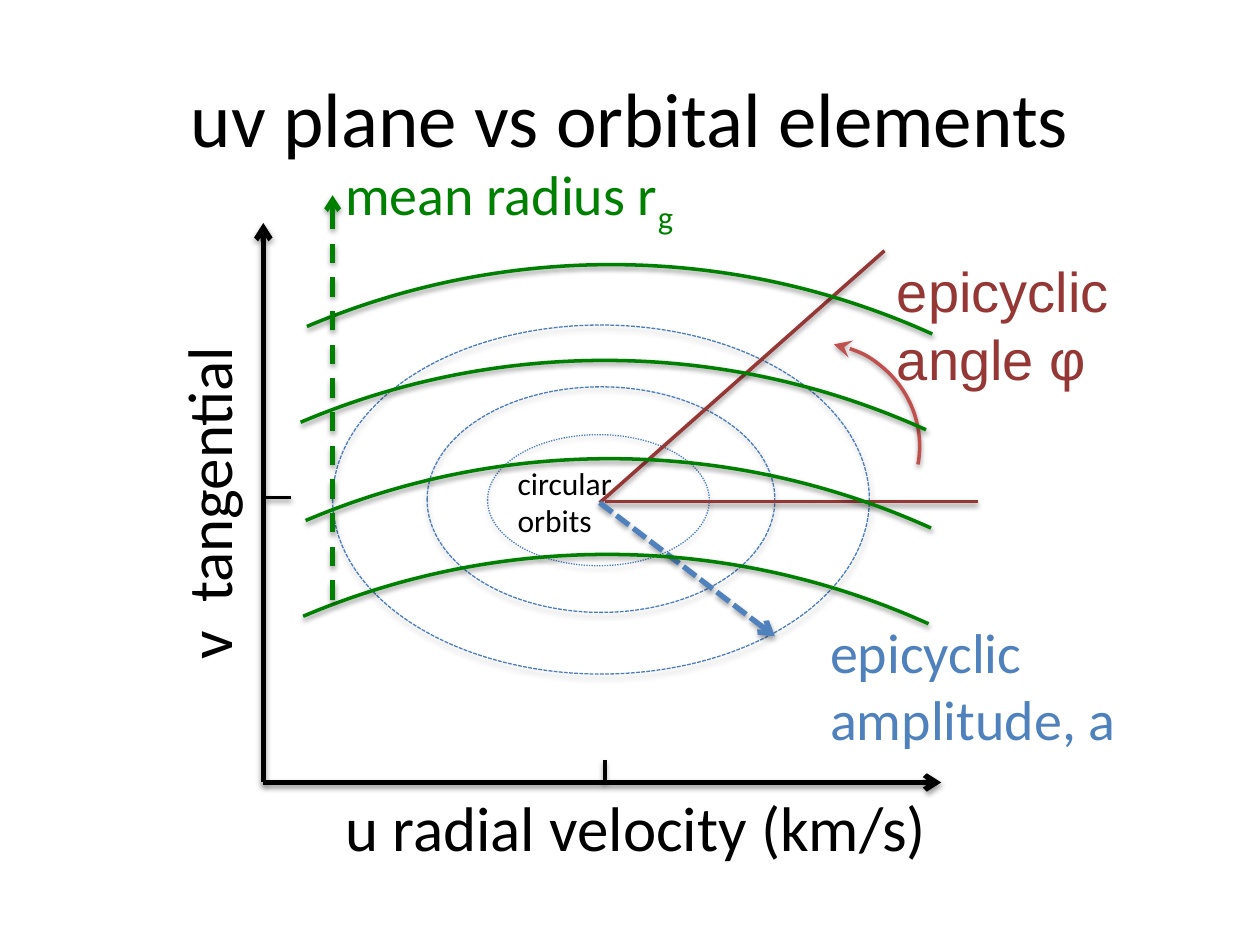
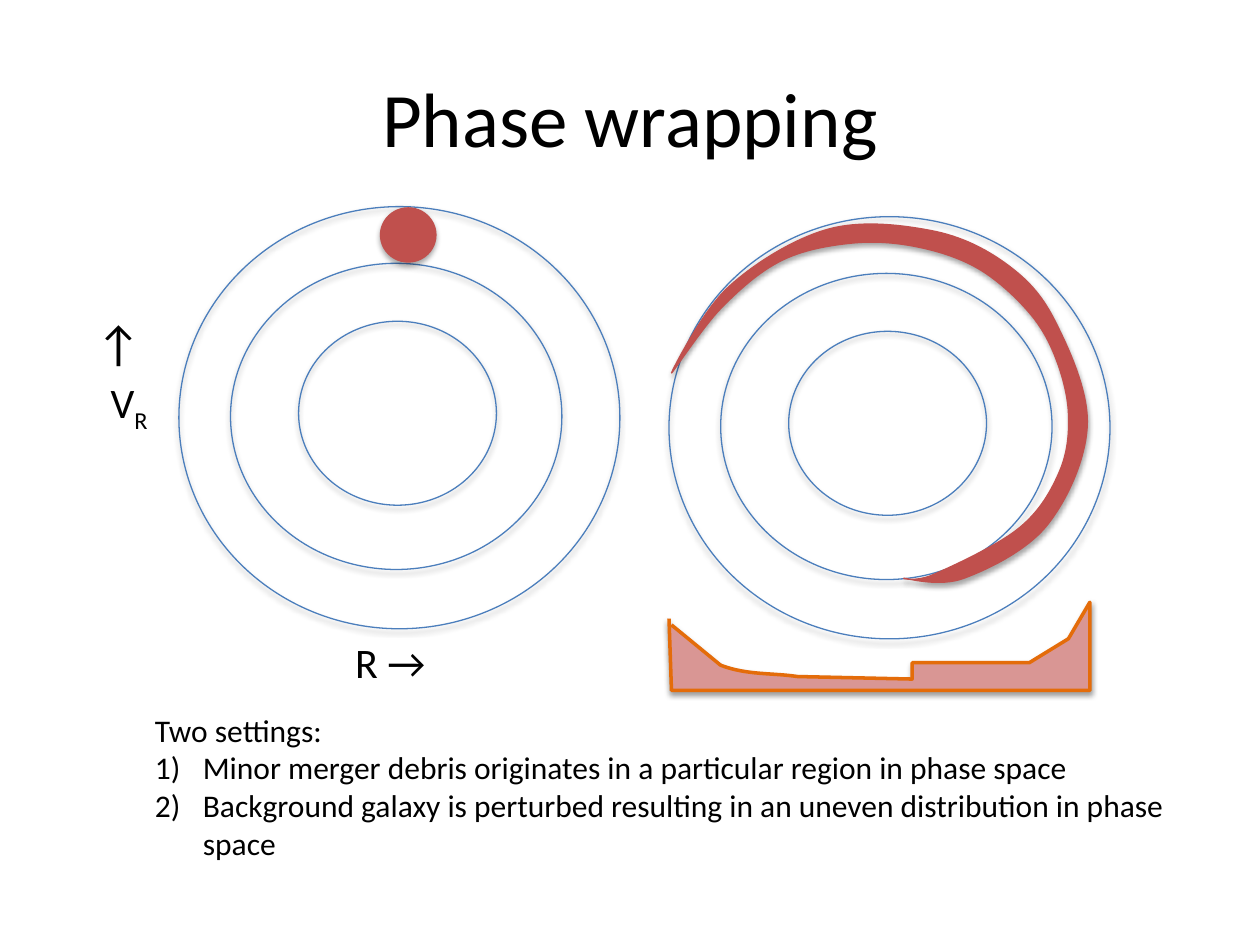
from pptx import Presentation
from pptx.dml.color import RGBColor
from pptx.enum.dml import MSO_LINE
from pptx.enum.shapes import MSO_CONNECTOR, MSO_SHAPE as SHAPE
from pptx.enum.text import MSO_ANCHOR, MSO_AUTO_SIZE, PP_ALIGN
from pptx.oxml import parse_xml
from pptx.oxml.ns import nsdecls, qn
from pptx.oxml.xmlchemy import OxmlElement
from pptx.util import Inches, Pt

# Shared look
COLORS = {
    "black": "000000", "ring": "4B7EBC", "amplitude": "4F81BD",
    "angle": "953735", "debris": "C0504D", "radius": "008000",
    "histogram": "D99694", "outline": "E46C0A",
}
FONT = "Calibri"
TITLE_BOX = (0.5, 0.3, 9, 1.25)
RING_SHADOW = (35, 1.8)  # opacity in percent, distance in points
LINE_SHADOW = (38, 1.6)


def rgb(name):
    return RGBColor.from_string(COLORS[name])


def place(sp, box):
    for name, value in zip(("left", "top", "width", "height"), box):
        setattr(sp, name, Inches(value))


def add_shadow(sp, shadow):
    opacity, dist = shadow
    sp._element.spPr.append(parse_xml(
        f'<a:effectLst {nsdecls("a")}><a:outerShdw blurRad="{Pt(3.1)}" '
        f'dist="{Pt(dist)}" dir="5400000" rotWithShape="0">'
        f'<a:srgbClr val="000000"><a:alpha val="{opacity * 1000}"/></a:srgbClr>'
        '</a:outerShdw></a:effectLst>'))


def stroke(sp, color, width, dash=None, head=None, tail=None):
    line = sp.line
    line.color.rgb = rgb(color)
    line.width = Pt(width)
    if dash is not None:
        line.dash_style = dash
    for tag, kind in (("a:headEnd", head), ("a:tailEnd", tail)):
        if kind:
            end = OxmlElement(tag)
            end.set("type", kind)
            if kind == "stealth":
                end.set("w", "lg")
                end.set("len", "lg")
            line._get_or_add_ln().append(end)


def paint(sp, fill):
    if fill:
        sp.fill.solid()
        sp.fill.fore_color.rgb = rgb(fill)
    else:
        sp.fill.background()


def add_outline(shapes, kind, box, color, width, fill=None, shadow=LINE_SHADOW,
                rotation=0, adjust=(), **ends):
    sp = shapes.add_shape(kind, *map(Inches, box))
    sp.rotation = rotation
    for i, value in enumerate(adjust):
        sp.adjustments[i] = value
    paint(sp, fill)
    stroke(sp, color, width, **ends)
    add_shadow(sp, shadow)


def add_line(shapes, start, end, color, width, **ends):
    sp = shapes.add_connector(MSO_CONNECTOR.STRAIGHT, *map(Inches, (*start, *end)))
    stroke(sp, color, width, **ends)
    add_shadow(sp, LINE_SHADOW)


def add_freeform(shapes, origin, points, curves, fill, color, width, shadow, close):
    """Outline through the points; curves maps a segment to its two control points."""
    pts = [(Inches(x), Inches(y)) for x, y in points]
    builder = shapes.build_freeform(*pts[0])
    builder.add_line_segments(pts[1:], close=close)
    sp = builder.convert_to_shape(*map(Inches, origin))
    left, top = (min(axis) for axis in zip(*pts))
    for i, segment in enumerate(list(sp._element.iter(qn("a:lnTo")))):
        if i in curves:
            curve = OxmlElement("a:cubicBezTo")
            for x, y in curves[i]:
                pt = OxmlElement("a:pt")
                pt.set("x", str(Inches(x) - left))
                pt.set("y", str(Inches(y) - top))
                curve.append(pt)
            curve.append(segment[0])
            segment.getparent().replace(segment, curve)
    paint(sp, fill)
    stroke(sp, color, width)
    add_shadow(sp, shadow)


def smooth_controls(knots):
    """Control points of a closed Catmull-Rom curve through the knots."""
    n = len(knots)
    curves = {}
    for i in range(n):
        before, a, b, after = (knots[(i + k) % n] for k in (-1, 0, 1, 2))
        curves[i] = (tuple(q + (s - p) / 6 for p, q, s in zip(before, a, b)),
                     tuple(q - (s - p) / 6 for p, q, s in zip(a, b, after)))
    return curves


def format_run(r, size, color="black", font=FONT):
    for name, value in {"name": font, "size": Pt(size)}.items():
        setattr(r.font, name, value)
    r.font.color.rgb = rgb(color)


def add_label(shapes, box, lines, size, color="black", font=FONT, sub=None, rotation=0):
    sp = shapes.add_textbox(*map(Inches, box))
    sp.rotation = rotation
    tf = sp.text_frame
    tf.word_wrap = True
    tf.auto_size = MSO_AUTO_SIZE.SHAPE_TO_FIT_TEXT
    for i, line in enumerate(lines):
        p = tf.add_paragraph() if i else tf.paragraphs[0]
        r = p.add_run()
        r.text = line
        format_run(r, size, color, font)
    if sub:
        r = p.add_run()
        r.text = sub
        format_run(r, size, color, font)
        r.font._element.set("baseline", "-25000")


def add_titled_slide(prs, layout, title):
    sl = prs.slides.add_slide(prs.slide_layouts[layout])
    place(sl.shapes.title, TITLE_BOX)
    tf = sl.shapes.title.text_frame
    tf.text = title
    tf.vertical_anchor = MSO_ANCHOR.MIDDLE
    tf.paragraphs[0].alignment = PP_ALIGN.CENTER
    format_run(tf.paragraphs[0].runs[0], 44)
    return sl


# Slide 1: parts placed from the centre of the contours
def draw_amplitude_rings(shapes, cx, cy):
    for dx, dy, w, h, dash in ((-1.37, -0.9, 2.76, 1.79, MSO_LINE.SQUARE_DOT),
                               (-0.89, -0.52, 1.76, 1.04, MSO_LINE.ROUND_DOT),
                               (-2.12, -1.39, 4.26, 2.77, MSO_LINE.SQUARE_DOT)):
        add_outline(shapes, SHAPE.OVAL, (cx + dx, cy + dy, w, h),
                    "ring", 0.75, dash=dash, shadow=RING_SHADOW)


def draw_epicycle(shapes, cx, cy):
    # Angle
    add_line(shapes, (cx, cy + 0.02), (cx + 2.26, cy - 1.98), "angle", 2)
    add_line(shapes, (cx + 0.04, cy + 0.01), (cx + 3, cy + 0.01), "angle", 2)
    add_label(shapes, (cx + 2.26, cy - 1.98, 2.53, 1.18), ["epicyclic angle φ"],
              32, "angle", "Arial")
    add_outline(shapes, SHAPE.ARC, (cx + 0.88, cy - 1.25, 1.66, 1.63),
                "debris", 2, rotation=10.5, head="stealth")
    # Amplitude
    add_line(shapes, (cx, cy + 0.02), (cx + 1.39, cy + 1.08), "amplitude", 3,
             dash=MSO_LINE.SQUARE_DOT, tail="arrow")
    add_label(shapes, (cx + 1.73, cy + 0.88, 2.53, 1.18), ["epicyclic amplitude, a"],
              32, "amplitude")


def draw_mean_radius(shapes, cx, cy):
    size = 12.36
    for dx, dy in ((0.04, -1.11), (0.09, -1.87), (0.08, -0.33), (0.06, 0.43)):
        add_outline(shapes, SHAPE.ARC, (cx + dx - size / 2, cy + dy, size, size),
                    "radius", 2, rotation=315, adjust=(175.206, 203.62))
    x = cx - 2.12
    add_line(shapes, (x, cy + 0.79), (x, cy - 2.42), "radius", 2.75,
             dash=MSO_LINE.DASH, tail="arrow")
    add_label(shapes, (x, cy - 2.75, 6.55, 0.64), ["mean radius r"], 32, "radius", sub="g")


def draw_axes(shapes, x, y):
    """Axes from their corner, with labels and ticks."""
    grp = shapes.add_group_shape().shapes
    for end in ((x + 5.38, y), (x, y - 4.44)):
        add_line(grp, (x, y), end, "black", 3, tail="arrow")
    add_label(grp, (x + 0.55, y, 5.32, 0.71), ["u radial velocity (km/s)"], 36)
    add_label(grp, (x - 2.12, y - 2.91, 3.36, 0.71), ["v  tangential"], 36, rotation=270)
    add_line(grp, (x + 2.71, y), (x + 2.71, y - 0.18), "black", 2)
    add_line(shapes, (x + 0.02, y - 2.26), (x + 0.22, y - 2.26), "black", 2)


def build_uv_plane(prs):
    shapes = add_titled_slide(prs, 5, "uv plane vs orbital elements").shapes
    cx, cy = 4.76, 3.97
    draw_amplitude_rings(shapes, cx, cy)
    draw_epicycle(shapes, cx, cy)
    draw_mean_radius(shapes, cx, cy)
    add_label(shapes, (cx - 0.75, cy - 0.34, 1.62, 0.71), ["circular", "orbits"], 18)
    draw_axes(shapes, 2.09, 6.21)


# Slide 2: parts placed from the top left of each region
DEBRIS_STREAM = [
    (0.02, 1.24), (0.47, 0.56), (1.26, 0.1), (2.08, 0.11), (2.67, 0.37), (3.06, 0.82),
    (3.32, 1.65), (3, 2.45), (2.34, 2.87), (1.87, 2.87), (2.1, 2.84), (2.78, 2.47),
    (3.1, 2.02), (3.17, 1.56), (3.06, 1.1), (2.84, 0.74), (2.45, 0.41), (1.97, 0.24),
    (1.45, 0.21), (0.89, 0.35), (0.41, 0.73),
]
HISTOGRAM = [
    (0, 0.13), (0.02, 0.7), (3.34, 0.7), (3.34, 0), (3.17, 0.29), (2.86, 0.48),
    (1.93, 0.48), (1.93, 0.61), (1.02, 0.59), (0.41, 0.5), (0.02, 0.18),
]
HISTOGRAM_CURVES = {8: ((0.82, 0.56), (0.62, 0.58))}


def draw_orbits(shapes, x, y):
    grp = shapes.add_group_shape().shapes
    for dx, dy, w, h in ((0, 0, 3.5, 3.35), (0.41, 0.45, 2.63, 2.43), (0.95, 0.91, 1.57, 1.46)):
        add_outline(grp, SHAPE.OVAL, (x + dx, y + dy, w, h), "ring", 0.75, shadow=RING_SHADOW)
    return grp


def draw_initial_debris(shapes, x, y):
    grp = draw_orbits(shapes, x, y)
    add_outline(grp, SHAPE.OVAL, (x + 1.6, y + 0.01, 0.44, 0.43), "debris", 0.75,
                fill="debris", shadow=RING_SHADOW)


def draw_wrapped_debris(shapes, x, y):
    grp = draw_orbits(shapes, x, y)
    add_freeform(grp, (x, y), DEBRIS_STREAM + DEBRIS_STREAM[:1], smooth_controls(DEBRIS_STREAM),
                 "debris", "debris", 0.75, RING_SHADOW, close=True)


def fill_settings(body, box):
    place(body, box)
    tf = body.text_frame
    tf.vertical_anchor = MSO_ANCHOR.TOP
    tf.auto_size = MSO_AUTO_SIZE.NONE
    lines = ["Two settings:",
             "Minor merger debris originates in a particular region in phase space",
             "Background galaxy is perturbed resulting in an uneven distribution in phase space"]
    for i, line in enumerate(lines):
        p = tf.add_paragraph() if i else tf.paragraphs[0]
        r = p.add_run()
        r.text = line
        format_run(r, 18)
        p.space_before = Pt(0)
        # Heading first, then numbered items
        pPr = p._p.get_or_add_pPr()
        indent = Inches(0.38) if i else 0
        pPr.set("marL", str(indent))
        pPr.set("indent", str(-indent))
        bullet = OxmlElement("a:buAutoNum" if i else "a:buNone")
        if i:
            bullet.set("type", "arabicParenR")
        pPr.append(bullet)


def build_phase_wrapping(prs):
    sl = add_titled_slide(prs, 1, "Phase wrapping")
    shapes = sl.shapes
    draw_initial_debris(shapes, 1.42, 1.64)
    draw_wrapped_debris(shapes, 5.31, 1.72)
    fill_settings(sl.placeholders[1], (1.13, 5.59, 8.37, 1.31))
    # Axis labels
    add_label(shapes, (2.72, 5, 1.22, 0.51), ["R →"], 24)
    add_label(shapes, (0.78, 2.94, 1.22, 0.51), ["V"], 24, sub="R")
    add_label(shapes, (0.59, 2.42, 0.63, 0.57), ["→"], 28, rotation=270)
    add_freeform(shapes, (5.31, 4.78), HISTOGRAM, HISTOGRAM_CURVES,
                 "histogram", "outline", 2, LINE_SHADOW, close=False)


def main():
    prs = Presentation()
    prs.slide_width, prs.slide_height = Inches(10), Inches(7.5)
    build_uv_plane(prs)
    build_phase_wrapping(prs)
    prs.save("out.pptx")


if __name__ == "__main__":
    main()
